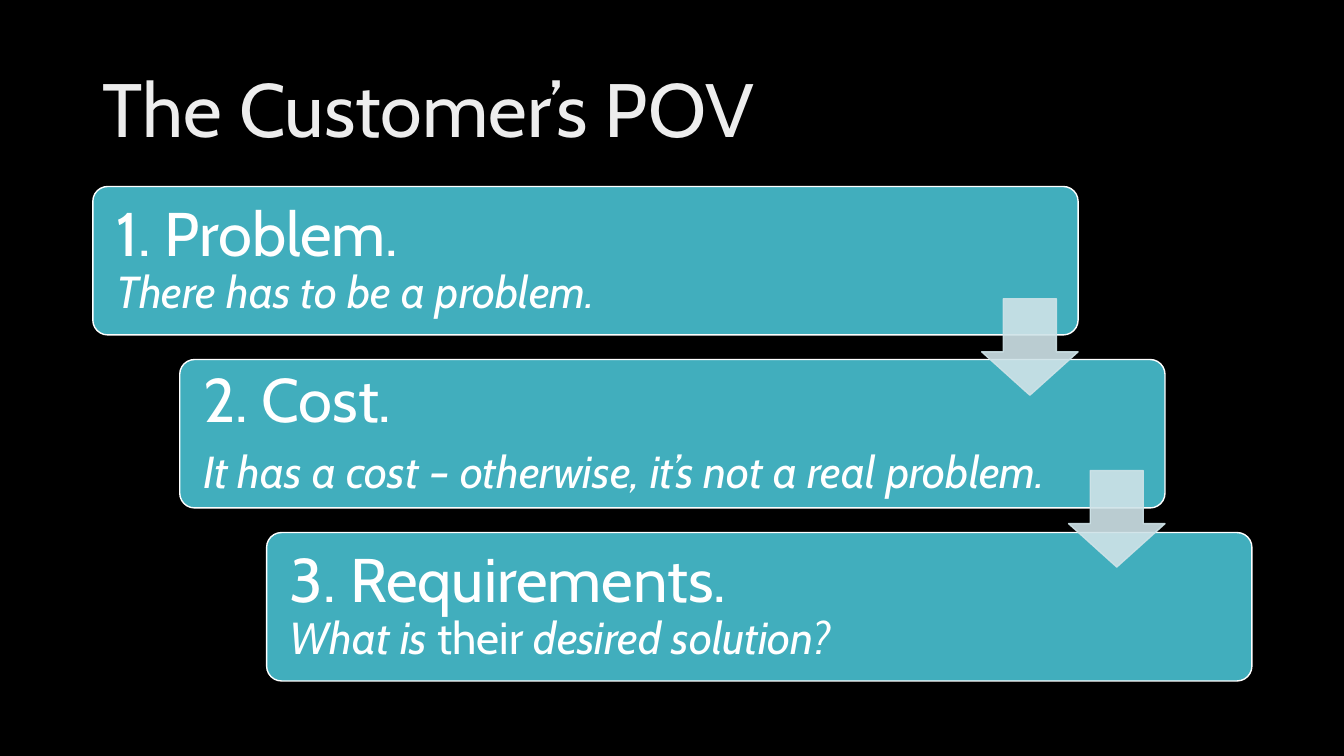
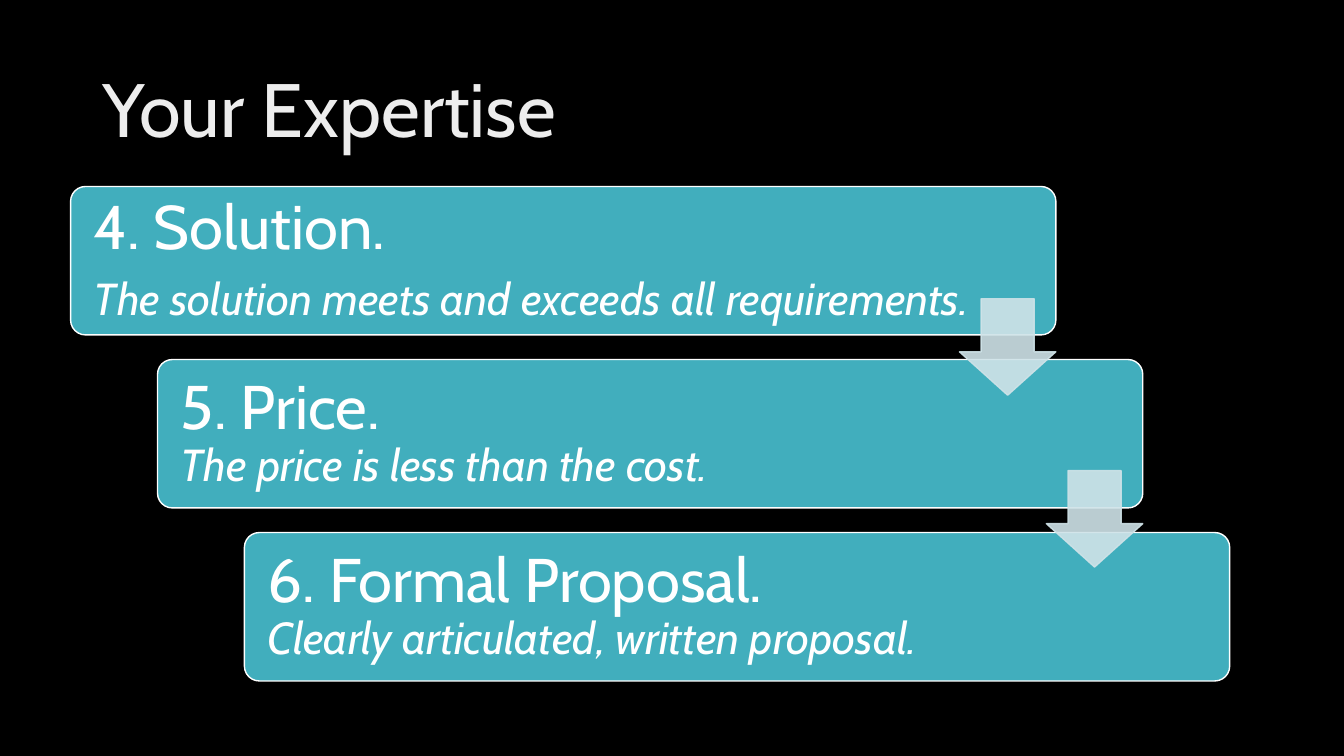
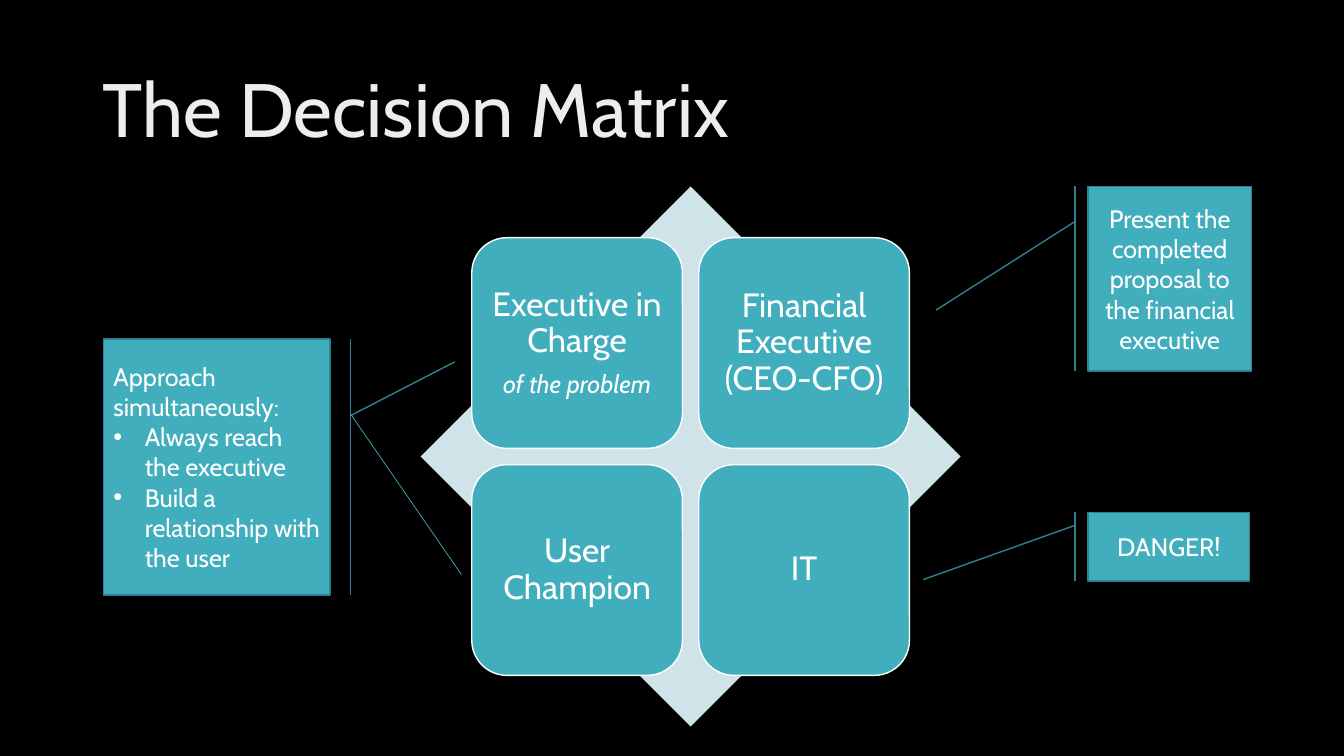
"""Build three sales-process slides: two step cascades and a decision matrix."""
from lxml import etree
from pptx import Presentation
from pptx.dml.color import RGBColor
from pptx.enum.shapes import MSO_CONNECTOR, MSO_SHAPE
from pptx.enum.text import MSO_ANCHOR, PP_ALIGN
from pptx.oxml.ns import qn
from pptx.util import Cm, Pt

ROUNDED = MSO_SHAPE.ROUNDED_RECTANGLE
DIAMOND = MSO_SHAPE.DIAMOND
ARROW = MSO_SHAPE.DOWN_ARROW
CALLOUT = MSO_SHAPE.LINE_CALLOUT_1_BORDER_AND_ACCENT_BAR
STRAIGHT = MSO_CONNECTOR.STRAIGHT
MIDDLE = MSO_ANCHOR.MIDDLE
LEFT, CENTER = PP_ALIGN.LEFT, PP_ALIGN.CENTER

FONT = "Cabin"
COLORS = {
    "background": "000000",
    "title": "EDEDED",
    "text": "FFFFFF",
    "teal": "41AEBD",
    "pale": "CFE3E8",
    "approach_edge": "2C8195",
    "callout_edge": "30818C",
}

CASCADES = [
    {
        "title": "The Customer’s POV",
        "left": 2.34,
        "steps": [
            ("1. Problem.", [("There has to be a problem.", True)], 0),
            ("2. Cost.", [("It has a cost – otherwise, it’s not a real problem.", True)], 10.5),
            ("3. Requirements.",
             [("What is ", True), ("their", False), (" desired solution?", True)], 0),
        ],
    },
    {
        "title": "Your Expertise",
        "left": 1.78,
        "steps": [
            ("4. Solution.", [("The solution meets and exceeds all requirements.", True)], 10.5),
            ("5. Price.", [("The price is less than the cost.", True)], 0),
            ("6. Formal Proposal.", [("Clearly articulated, written proposal.", True)], 0),
        ],
    },
]
CARD_TOP, CARD_WIDTH, CARD_HEIGHT = 4.7, 24.83, 3.74
CARD_STEP_X, CARD_STEP_Y = 2.19, 4.36
ARROW_TOP, ARROW_SIZE, ARROW_STEP_Y = 7.53, 2.43, 4.33

MATRIX_TITLE = "The Decision Matrix"
MATRIX_DIAMOND = (10.6, 4.7, 13.61, 13.61)
TILES = [
    ("Executive in Charge", "of the problem"),
    ("Financial Executive (CEO-CFO)", None),
    ("User Champion", None),
    ("IT", None),
]
TILE_LEFT, TILE_TOP, TILE_SIZE, TILE_STEP = 11.89, 5.99, 5.31, 5.72
CALLOUTS = [
    {
        "place": (2.61, 8.54, 5.71, 6.45),
        "pointer": (0.3, 1.09, 0.09, 1.55),
        "edge": "approach_edge",
        "align": LEFT,
        "lines": ["Approach simultaneously:"],
        "bullets": ["Always reach the executive", "Build a relationship with the user"],
    },
    {
        "place": (27.42, 4.7, 4.12, 4.65),
        "pointer": (0.19, -0.08, 0.67, -0.93),
        "edge": "callout_edge",
        "align": CENTER,
        "lines": ["Present the completed proposal to the financial executive"],
        "bullets": [],
    },
    {
        "place": (27.42, 12.91, 4.07, 1.73),
        "pointer": (0.19, -0.08, 0.98, -1.02),
        "edge": "callout_edge",
        "align": CENTER,
        "lines": ["DANGER!"],
        "bullets": [],
    },
]
USER_LINE = (8.84, 10.44, 11.63, 14.48)


def color(name):
    return RGBColor.from_string(COLORS[name])


def add_block(page, kind, place, fill, edge=None, adjustments=()):
    block = page.shapes.add_shape(kind, *map(Cm, place))
    block.shadow.inherit = False
    block.fill.solid()
    block.fill.fore_color.rgb = color(fill)
    if edge:
        block.line.color.rgb = color(edge)
        block.line.width = Pt(1)
    else:
        block.line.fill.background()
    for index, value in enumerate(adjustments):
        block.adjustments[index] = value
    return block


def prepare_frame(box, inset_x=0.25, inset_y=0.13, inset_right=None):
    frame = box.text_frame
    frame.word_wrap = True
    frame.vertical_anchor = MIDDLE
    frame.margin_left = Cm(inset_x)
    frame.margin_right = Cm(inset_right or inset_x)
    frame.margin_top = frame.margin_bottom = Cm(inset_y)
    return frame


def add_paragraph(frame, spans, size, align=LEFT, spacing=0.9, before=0, tint="text", bullet=False):
    first = frame.paragraphs[0]
    para = frame.add_paragraph() if first.runs else first
    para.alignment = align
    para.line_spacing = spacing
    if before:
        para.space_before = Pt(before)
    if bullet:
        properties = para._p.get_or_add_pPr()
        properties.set("marL", str(Cm(0.79)))
        properties.set("indent", str(-Cm(0.79)))
        etree.SubElement(properties, qn("a:buFont")).set("typeface", "Arial")
        etree.SubElement(properties, qn("a:buChar")).set("char", "•")
    for text, italic in spans:
        span = para.add_run()
        span.text = text
        span.font.name = FONT
        span.font.size = Pt(size)
        span.font.italic = italic
        span.font.color.rgb = color(tint)


def add_page(deck, title):
    page = deck.slides.add_slide(deck.slide_layouts[6])
    page.background.fill.solid()
    page.background.fill.fore_color.rgb = color("background")
    box = page.shapes.add_textbox(Cm(2.34), Cm(1.02), Cm(29.21), Cm(3.68))
    add_paragraph(prepare_frame(box), [(title, False)], 54, tint="title")
    return page


def add_cascade(deck, cascade):
    page = add_page(deck, cascade["title"])
    lefts = [cascade["left"] + i * CARD_STEP_X for i in range(len(cascade["steps"]))]
    for i, (heading, detail, gap) in enumerate(cascade["steps"]):
        place = (lefts[i], CARD_TOP + i * CARD_STEP_Y, CARD_WIDTH, CARD_HEIGHT)
        card = add_block(page, ROUNDED, place, "teal", "text", [0.1])
        frame = prepare_frame(card, 0.48, 0.48, 1.7)
        add_paragraph(frame, [(heading, False)], 44)
        add_paragraph(frame, detail, 32, before=gap)
    for i, left in enumerate(lefts[:-1]):
        place = (left + CARD_WIDTH - ARROW_SIZE, ARROW_TOP + i * ARROW_STEP_Y,
                 ARROW_SIZE, ARROW_SIZE)
        arrow = add_block(page, ARROW, place, "pale", "pale", [0.55, 0.45])
        for tone in arrow._element.spPr.iter(qn("a:srgbClr")):
            etree.SubElement(tone, qn("a:alpha")).set("val", "90000")


def add_matrix(deck):
    page = add_page(deck, MATRIX_TITLE)
    add_block(page, DIAMOND, MATRIX_DIAMOND, "pale")
    for i, (role, note) in enumerate(TILES):
        row, column = divmod(i, 2)
        place = (TILE_LEFT + column * TILE_STEP, TILE_TOP + row * TILE_STEP,
                 TILE_SIZE, TILE_SIZE)
        frame = prepare_frame(add_block(page, ROUNDED, place, "teal", "text"), 0.23, 0.23)
        add_paragraph(frame, [(role, False)], 24, CENTER)
        if note:
            add_paragraph(frame, [(note, True)], 18, CENTER, before=8.4)
    for callout in CALLOUTS:
        box = add_block(page, CALLOUT, callout["place"], "teal", callout["edge"],
                        callout["pointer"])
        frame = prepare_frame(box)
        for key in ("lines", "bullets"):
            for text in callout[key]:
                add_paragraph(frame, [(text, False)], 18, callout["align"], 1.0,
                              bullet=key == "bullets")
    line = page.shapes.add_connector(STRAIGHT, *map(Cm, USER_LINE))
    line.line.color.rgb = color("teal")
    line.line.width = Pt(0.5)
    etree.SubElement(line._element.spPr, qn("a:effectLst"))


def main():
    deck = Presentation()
    deck.slide_width, deck.slide_height = Cm(33.87), Cm(19.05)
    for cascade in CASCADES:
        add_cascade(deck, cascade)
    add_matrix(deck)
    deck.save("out.pptx")


if __name__ == "__main__":
    main()
